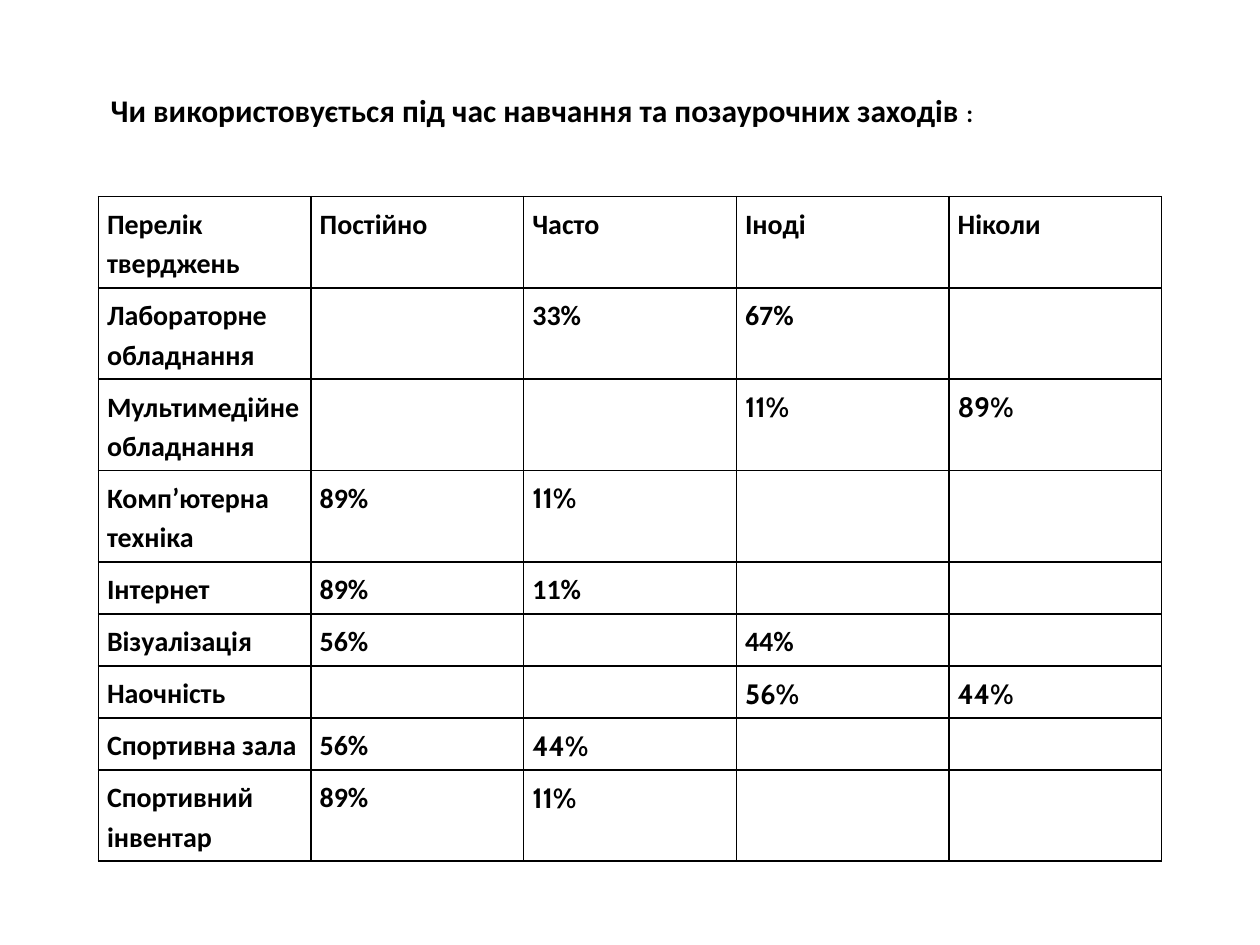
from lxml import etree
from pptx import Presentation
from pptx import util as u
from pptx.dml.color import RGBColor
from pptx.enum import text
from pptx.oxml import ns

INK = {"black": "000000"}

HEAD = ["Перелік тверджень", "Постійно", "Часто", "Іноді", "Ніколи"]
ROWS = [
    ["Лабораторне обладнання", "", "33%", "67%", ""],
    ["Мультимедійне\nобладнання", "", "", "11%", "89%"],
    ["Комп’ютерна техніка", "89%", "11%", "", ""],
    ["Інтернет", "89%", "11%", "", ""],
    ["Візуалізація", "56%", "", "44%", ""],
    ["Наочність", "", "", "56%", "44%"],
    ["Спортивна зала", "56%", "44%", "", ""],
    ["Спортивний інвентар", "89%", "11%", "", ""],
]
TALL = {0, 1, 2, 3, 8}  # rows with two lines
# Cells (row, column) set in the second font
ALT = {(2, 3), (2, 4), (3, 2), (6, 3), (6, 4), (7, 2), (8, 2)}


class Page:
    main, alt = "Calibri", "Cabin"

    def __init__(self, slide):
        self.slide = slide

    def style(self, run, size, face=None):
        font = run.font
        font.name = face or self.main
        font.size = u.Pt(size)
        font.bold = True
        font.color.rgb = RGBColor.from_string(INK["black"])

    def title(self, box, words, mark):
        shape = self.slide.shapes.add_textbox(*map(u.Inches, box))
        frame = shape.text_frame
        frame.word_wrap = True
        frame.auto_size = text.MSO_AUTO_SIZE.SHAPE_TO_FIT_TEXT
        frame.vertical_anchor = text.MSO_ANCHOR.MIDDLE
        frame.text = words
        para = frame.paragraphs[0]
        self.style(para.runs[0], 18)
        tail = para.add_run()
        tail.text = mark
        self.style(tail, 14)

    def border(self, cell):
        props = cell._tc.get_or_add_tcPr()
        for spot, side in enumerate(("lnL", "lnR", "lnT", "lnB")):
            line = etree.Element(ns.qn("a:" + side), w=str(u.Pt(0.96)))
            fill = etree.SubElement(line, ns.qn("a:solidFill"))
            etree.SubElement(fill, ns.qn("a:srgbClr"), val=INK["black"])
            props.insert(spot, line)

    def cell(self, cell, words, face):
        cell.fill.background()
        cell.margin_left = cell.margin_right = u.Inches(0.07)
        cell.margin_top = cell.margin_bottom = u.Inches(0.05)
        self.border(cell)
        cell.text_frame.text = words
        for para in cell.text_frame.paragraphs:
            para.line_spacing = 1.15
            for run in para.runs:
                self.style(run, 16, face)

    def table(self, box, data):
        frame = self.slide.shapes.add_table(
            len(data), len(data[0]), *map(u.Inches, box))
        grid = frame.table
        grid.first_row = grid.horz_banding = False
        for col in grid.columns:
            col.width = u.Inches(box[2] / len(data[0]))
        for r, row in enumerate(data):
            grid.rows[r].height = u.Inches(0.66 if r in TALL else 0.33)
            for c, words in enumerate(row):
                face = self.alt if (r, c) in ALT else self.main
                self.cell(grid.cell(r, c), words, face)


def main():
    deck = Presentation()
    deck.slide_width, deck.slide_height = u.Inches(10), u.Inches(7.5)
    page = Page(deck.slides.add_slide(deck.slide_layouts[6]))

    # Survey results
    page.table((0.78, 1.56, 8.44, 4.61), [HEAD] + ROWS)

    # Question
    page.title((0.78, 0.67, 7.73, 0.4),
               "Чи використовується під час навчання та позаурочних заходів ",
               ":")

    deck.save("out.pptx")


if __name__ == "__main__":
    main()
